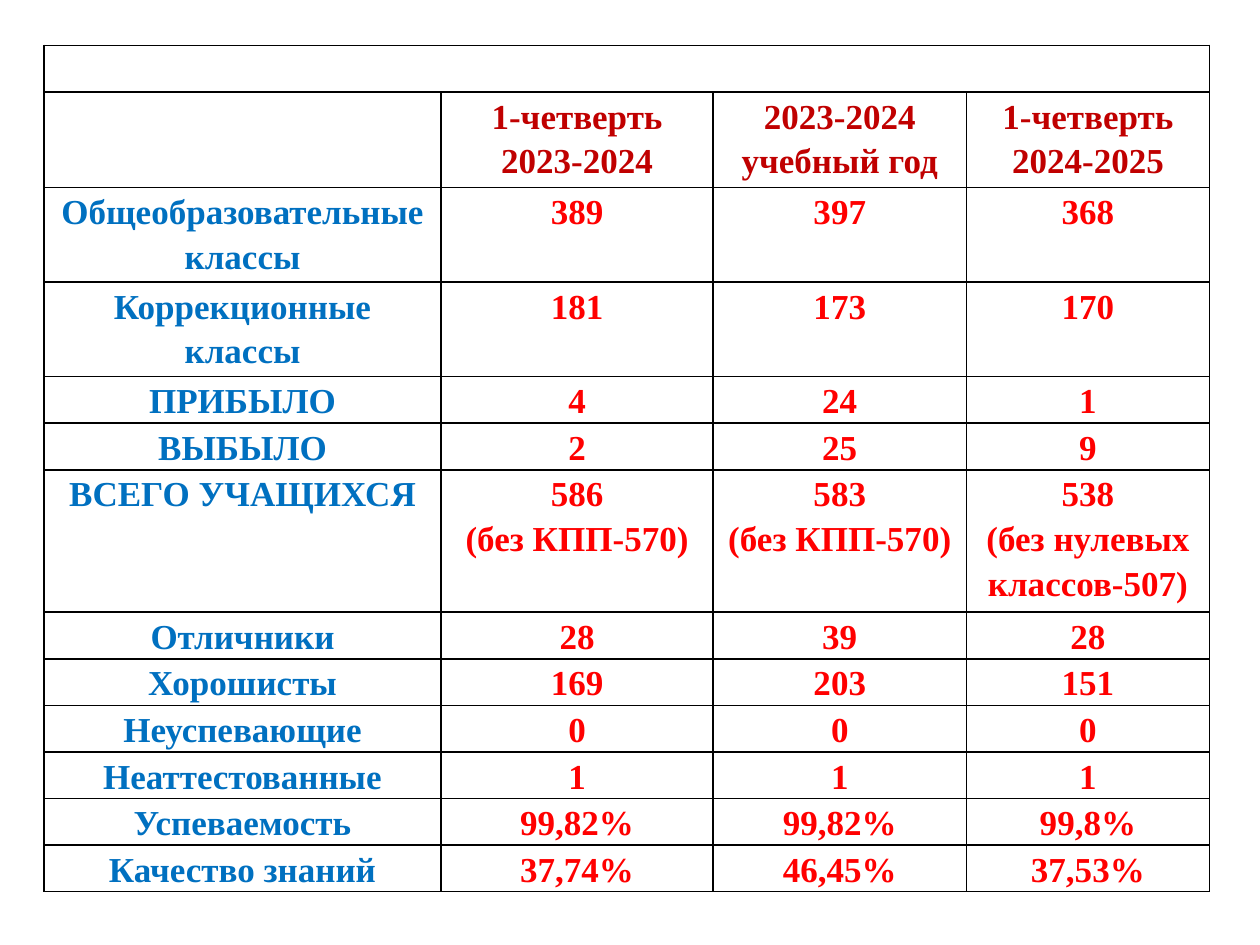
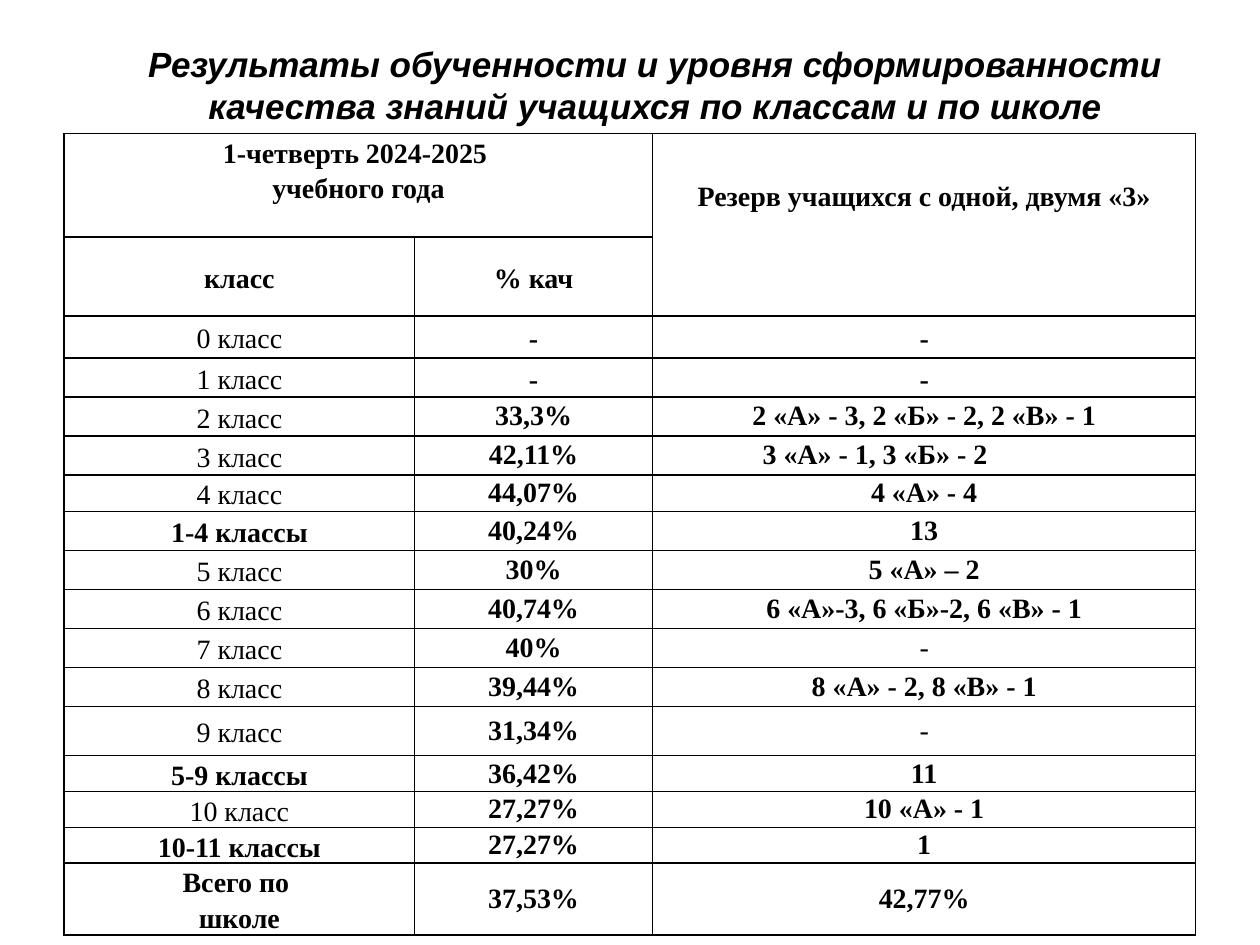
from dataclasses import dataclass

from lxml.etree import SubElement
from pptx import Presentation
from pptx.dml.color import RGBColor
from pptx.enum.text import MSO_ANCHOR as Anchor, PP_ALIGN as Align
from pptx.oxml.ns import qn
from pptx.util import Inches, Pt

GRID_COLS, GRID_ROWS = 1000, 750
WIDTH, HEIGHT = Inches(10), Inches(7.5)
SERIF, SANS = "Times New Roman", "Arial"
BLACK, DARK_RED, RED, BLUE = "000000", "C00000", "FF0000", "0070C0"
LOOSE = 1.15
SIDE = 7


@dataclass
class Style:
    size: int
    color: str = BLACK
    bold: bool = True
    italic: bool = False
    font: str = SERIF
    spacing: float = 1.0


@dataclass
class Cell:
    text: str
    style: Style
    anchor: Anchor = Anchor.TOP
    top: int = 0
    right: int = SIDE


@dataclass
class Grid:
    left: int
    top: int
    cols: list[int]
    rows: list[int]
    cells: list[list[Cell]]
    merges: list[tuple[int, int, int, int]]


def gx(cols: int) -> int:
    return round(WIDTH * cols / GRID_COLS)


def gy(rows: int) -> int:
    return round(HEIGHT * rows / GRID_ROWS)


def rgb(color: str) -> RGBColor:
    return RGBColor.from_string(color)


def write(tf, text: str, style: Style) -> None:
    for i, line in enumerate(text.split("\n")):
        p = tf.paragraphs[0] if i == 0 else tf.add_paragraph()
        p.alignment = Align.CENTER
        p.line_spacing = style.spacing
        r = p.add_run()
        r.text = line
        r.font.name = style.font
        r.font.size = Pt(style.size)
        r.font.bold = style.bold
        r.font.italic = style.italic
        r.font.color.rgb = rgb(style.color)


def add_borders(tc) -> None:
    props = tc.get_or_add_tcPr()
    for i, side in enumerate(("lnL", "lnR", "lnT", "lnB")):
        line = props.makeelement(qn(f"a:{side}"), {"w": str(Pt(1))})
        fill = SubElement(line, qn("a:solidFill"))
        SubElement(fill, qn("a:srgbClr"), val=BLACK)
        props.insert(i, line)


def add_grid(s, grid: Grid) -> None:
    table = s.shapes.add_table(
        len(grid.rows), len(grid.cols), gx(grid.left), gy(grid.top),
        gx(sum(grid.cols)), gy(sum(grid.rows))).table
    table.first_row = table.horz_banding = False
    for col, width in zip(table.columns, grid.cols):
        col.width = gx(width)
    for row, height in zip(table.rows, grid.rows):
        row.height = gy(height)
    for row, cells in zip(table.rows, grid.cells):
        for target, cell in zip(row.cells, cells):
            target.margin_left, target.margin_right = gx(SIDE), gx(cell.right)
            target.margin_top, target.margin_bottom = gy(cell.top), 0
            target.vertical_anchor = cell.anchor
            target.fill.background()
            add_borders(target._tc)
            if cell.text:
                write(target.text_frame, cell.text, cell.style)
    for top, left, bottom, right in grid.merges:
        table.cell(top, left).merge(table.cell(bottom, right))


def add_title(s, text: str) -> None:
    tf = s.shapes.add_textbox(gx(67), gy(29), gx(906), gy(77)).text_frame
    tf.word_wrap = True
    write(tf, text, Style(20, italic=True, font=SANS))


QUARTERS = [
    ("", "", "", ""),
    ("", "1-четверть 2023-2024", "2023-2024 учебный год", "1-четверть 2024-2025"),
    ("Общеобразовательные классы", "389", "397", "368"),
    ("Коррекционные классы", "181", "173", "170"),
    ("ПРИБЫЛО", "4", "24", "1"),
    ("ВЫБЫЛО", "2", "25", "9"),
    ("ВСЕГО УЧАЩИХСЯ", "586\n(без КПП-570)", "583\n(без КПП-570)",
     "538\n(без нулевых классов-507)"),
    ("Отличники", "28", "39", "28"),
    ("Хорошисты", "169", "203", "151"),
    ("Неуспевающие", "0", "0", "0"),
    ("Неаттестованные", "1", "1", "1"),
    ("Успеваемость", "99,82%", "99,82%", "99,8%"),
    ("Качество знаний", "37,74%", "46,45%", "37,53%"),
]

CLASSES = [
    ("0 класс", "-", "-"),
    ("1 класс", "-", "-"),
    ("2 класс", "33,3%", "2 «А» - 3, 2 «Б» - 2, 2 «В» - 1"),
    ("3 класс", "42,11%", "3 «А» - 1, 3 «Б» - 2"),
    ("4 класс", "44,07%", "4 «А» - 4"),
    ("1-4 классы", "40,24%", "13"),
    ("5 класс", "30%", "5 «А» – 2"),
    ("6 класс", "40,74%", "6 «А»-3, 6 «Б»-2, 6 «В» - 1"),
    ("7 класс", "40%", "-"),
    ("8 класс", "39,44%", "8 «А» - 2, 8 «В» - 1"),
    ("9 класс", "31,34%", "-"),
    ("5-9 классы", "36,42%", "11"),
    ("10 класс", "27,27%", "10 «А» - 1"),
    ("10-11 классы", "27,27%", "1"),
    ("Всего по \nшколе", "37,53%", "42,77%"),
]


def quarter_cell(row: int, col: int, text: str) -> Cell:
    color = DARK_RED if row == 1 else RED if col else BLUE
    return Cell(text, Style(20, color, spacing=LOOSE))


def class_row(name: str, quality: str, reserve: str) -> list[Cell]:
    untaught = quality == "-"
    spacing = LOOSE if untaught else 1.0
    name_style = Style(16, bold=not name.endswith("класс"), spacing=LOOSE)
    reserve_style = Style(16, bold=untaught or reserve != "-", spacing=spacing)
    name_anchor = Anchor.TOP if "\n" in name else Anchor.MIDDLE
    return [
        Cell(name, name_style, name_anchor),
        Cell(quality, Style(16, spacing=spacing), Anchor.MIDDLE),
        Cell(reserve, reserve_style, Anchor.MIDDLE,
             right=85 if name == "3 класс" else SIDE),
    ]


def class_header() -> list[list[Cell]]:
    head = Style(16, spacing=LOOSE)
    blank = Cell("", head)
    return [
        [Cell("1-четверть 2024-2025 \nучебного года", head), blank,
         Cell("Резерв учащихся с одной, двумя «3»", head, top=34)],
        [Cell("класс", head, Anchor.MIDDLE),
         Cell("% кач", head, Anchor.MIDDLE), blank],
    ]


def main() -> None:
    prs = Presentation()
    prs.slide_width, prs.slide_height = WIDTH, HEIGHT
    blank = prs.slide_layouts[6]

    s = prs.slides.add_slide(blank)
    add_grid(s, Grid(
        35, 36, [315, 216, 201, 193],
        [37, 76, 75, 75, 37, 37, 113] + [37] * 6,
        [[quarter_cell(i, j, text) for j, text in enumerate(row)]
         for i, row in enumerate(QUARTERS)],
        [(0, 0, 0, 3)]))

    s = prs.slides.add_slide(blank)
    add_grid(s, Grid(
        51, 106, [278, 189, 431],
        [82, 63, 33, 31, 31, 31, 29] + [31] * 5 + [39] + [28] * 3 + [57],
        class_header() + [class_row(*row) for row in CLASSES],
        [(0, 0, 0, 1), (0, 2, 1, 2)]))
    add_title(s, "Результаты обученности и уровня сформированности "
                 "качества знаний учащихся по классам и по школе")
    prs.save("out.pptx")


if __name__ == "__main__":
    main()
